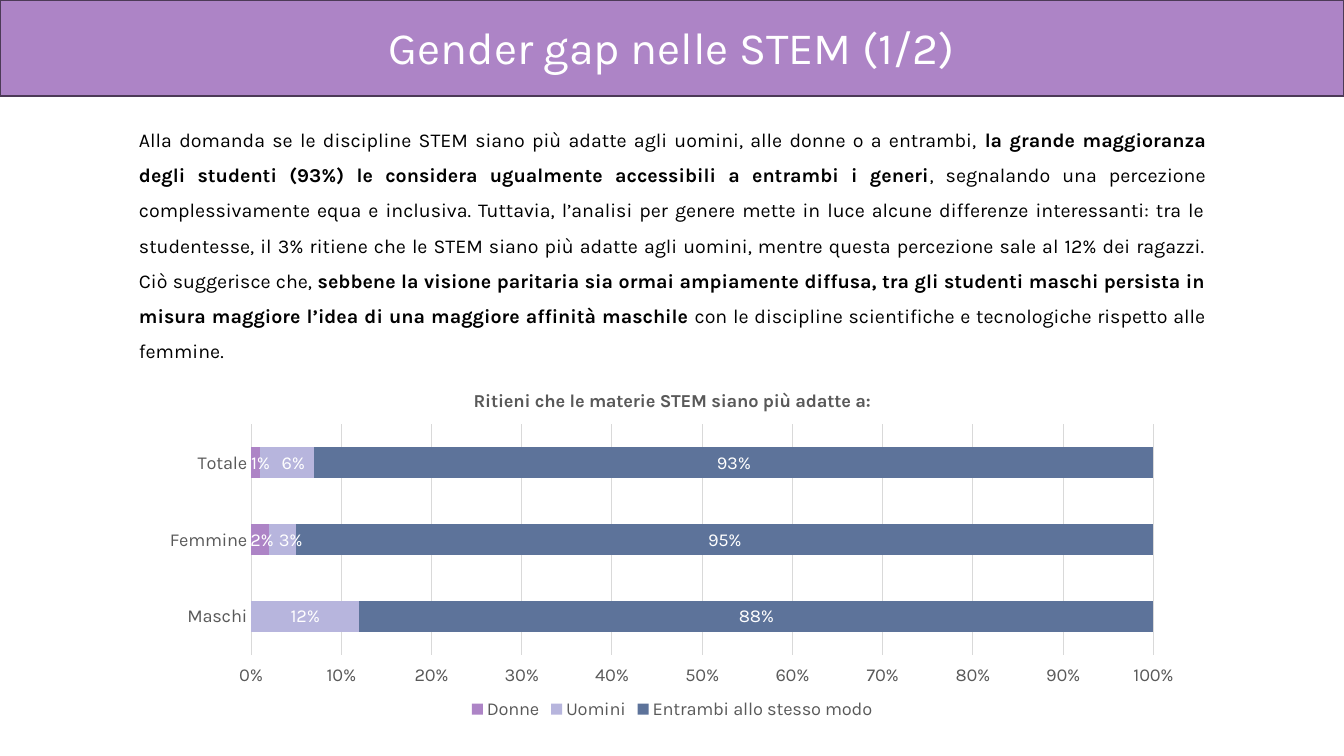
from lxml import etree
from pptx import Presentation
from pptx.chart.data import CategoryChartData
from pptx.dml.color import RGBColor
from pptx.enum.chart import XL_CHART_TYPE as ChartType, XL_LABEL_POSITION as LabelPosition
from pptx.enum.chart import XL_LEGEND_POSITION as LegendPosition, XL_TICK_MARK as TickMark
from pptx.enum.chart import XL_TICK_LABEL_POSITION as TickLabels
from pptx.enum.shapes import MSO_SHAPE as Shape
from pptx.enum.text import MSO_AUTO_SIZE as AutoSize, PP_ALIGN as Align
from pptx.oxml.ns import qn
from pptx.util import Inches, Pt

FONT = "Karla"
PURPLE = RGBColor(0xAD, 0x84, 0xC6)
LILAC = RGBColor(0xB7, 0xB5, 0xDD)
BLUE = RGBColor(0x5D, 0x73, 0x9A)
BORDER = RGBColor(0x4C, 0x3A, 0x57)
GRAY = RGBColor(0x59, 0x59, 0x59)
GRID = RGBColor(0xD9, 0xD9, 0xD9)
WHITE = RGBColor(0xFF, 0xFF, 0xFF)
BLACK = RGBColor(0, 0, 0)

TITLE = [("Gender gap nelle STEM (1/2)", False)]
BODY = [
    ("Alla domanda se le discipline STEM siano più adatte agli uomini, alle donne o a entrambi, ", False),
    ("la grande maggioranza degli studenti (93%) le considera ugualmente accessibili a entrambi i generi", True),
    (", segnalando una percezione complessivamente equa e inclusiva. Tuttavia, l’analisi per genere "
     "mette in luce alcune differenze interessanti: tra le studentesse, il 3% ritiene che le STEM siano "
     "più adatte agli uomini, mentre questa percezione sale al 12% dei ragazzi. Ciò suggerisce che, ", False),
    ("sebbene la visione paritaria sia ormai ampiamente diffusa, tra gli studenti maschi persista in "
     "misura maggiore l’idea di una maggiore affinità maschile", True),
    (" con le discipline scientifiche e tecnologiche rispetto alle femmine.", False),
]
QUESTION = "Ritieni che le materie STEM siano più adatte a:"
GROUPS = ["Totale", "Femmine", "Maschi"]
ANSWERS = [
    ("Donne", (0.01, 0.02, 0), PURPLE),
    ("Uomini", (0.06, 0.03, 0.12), LILAC),
    ("Entrambi allo stesso modo", (0.93, 0.95, 0.88), BLUE),
]
LABEL_SHIFTS = {"Donne": (0.05, 0.02), "Uomini": (0.06, 0.08)}
LABEL_FORMAT = "0%;;"
CHART_AREA = (1.48, 3.7, 10.37, 3.48)
PLOT_AREA = (2.49, 4.21, 8.95, 2.29)


def set_font(font, size, color, bold=None):
    font.name = FONT
    font.size = Pt(size)
    font.color.rgb = color
    if bold is not None:
        font.bold = bold


def add_text(page, area, spans, size, color, align, spacing=None):
    box = page.shapes.add_textbox(*map(Inches, area))
    frame = box.text_frame
    frame.word_wrap = True
    frame.auto_size = AutoSize.SHAPE_TO_FIT_TEXT
    para = frame.paragraphs[0]
    para.alignment = align
    para.line_spacing = spacing
    set_font(para.font, size, color)
    for text, bold in spans:
        span = para.add_run()
        span.text = text
        span.font.bold = bold


def manual_layout(values):
    layout = etree.Element(qn("c:layout"))
    manual = etree.SubElement(layout, qn("c:manualLayout"))
    for name, value in values.items():
        etree.SubElement(manual, qn("c:" + name)).set("val", str(value))
    return layout


def place_plot(chart):
    left, top, width, height = CHART_AREA
    plot_left, plot_top, plot_width, plot_height = PLOT_AREA
    plot_area = chart.element.find(".//" + qn("c:plotArea"))
    for old in plot_area.findall(qn("c:layout")):
        plot_area.remove(old)
    plot_area.insert(0, manual_layout({
        "layoutTarget": "inner", "xMode": "edge", "yMode": "edge",
        "x": round((plot_left - left) / width, 4),
        "y": round((plot_top - top) / height, 4),
        "w": round(plot_width / width, 4),
        "h": round(plot_height / height, 4),
    }))


def shift_label(series, index, shift):
    label = series.points[index].data_label
    set_font(label.font, 13, WHITE, False)
    label.position = LabelPosition.CENTER
    element = series.data_labels._element.findall(qn("c:dLbl"))[index]
    number_format = etree.Element(qn("c:numFmt"), formatCode=LABEL_FORMAT, sourceLinked="0")
    element.insert(1, manual_layout({"x": round(shift / CHART_AREA[2], 4), "y": 0}))
    element.insert(2, number_format)


def add_answers_chart(page):
    data = CategoryChartData(number_format="0%")
    data.categories = GROUPS
    for name, shares, color in ANSWERS:
        data.add_series(name, shares)
    chart = page.shapes.add_chart(ChartType.BAR_STACKED_100, *map(Inches, CHART_AREA), data).chart
    set_font(chart.font, 13, GRAY)

    chart.has_title = True
    heading = chart.chart_title.text_frame
    heading.text = QUESTION
    set_font(heading.paragraphs[0].font, 13, GRAY, True)

    chart.has_legend = True
    chart.legend.position = LegendPosition.BOTTOM
    chart.legend.include_in_layout = False
    set_font(chart.legend.font, 13, GRAY)

    groups, scale = chart.category_axis, chart.value_axis
    for axis in (groups, scale):
        axis.major_tick_mark = axis.minor_tick_mark = TickMark.NONE
        set_font(axis.tick_labels.font, 13, GRAY)
    groups.reverse_order = True
    scale.tick_label_position = TickLabels.HIGH
    scale.minimum_scale, scale.maximum_scale, scale.major_unit = 0, 1, 0.1
    scale.tick_labels.number_format = "0%"
    scale.tick_labels.number_format_is_linked = False
    scale.has_major_gridlines = True
    scale.format.line.fill.background()
    for line in (groups.format.line, scale.major_gridlines.format.line):
        line.color.rgb = GRID
        line.width = Pt(0.75)

    plot = chart.plots[0]
    plot.gap_width = 150
    plot.overlap = 100
    for series, (name, shares, color) in zip(plot.series, ANSWERS):
        series.format.fill.solid()
        series.format.fill.fore_color.rgb = color
        labels = series.data_labels
        labels.show_value = True
        labels.position = LabelPosition.CENTER
        labels.number_format = LABEL_FORMAT
        labels.number_format_is_linked = False
        set_font(labels.font, 13, WHITE, False)
        for index, shift in enumerate(LABEL_SHIFTS.get(name, ())):
            shift_label(series, index, shift)
    place_plot(chart)


def main():
    deck = Presentation()
    deck.slide_width, deck.slide_height = Inches(13.33), Inches(7.5)
    page = deck.slides.add_slide(deck.slide_layouts[6])

    banner = page.shapes.add_shape(Shape.RECTANGLE, 0, 0, deck.slide_width, Inches(0.95))
    banner.shadow.inherit = False
    banner.fill.solid()
    banner.fill.fore_color.rgb = PURPLE
    banner.line.color.rgb = BORDER
    banner.line.width = Pt(1.5)

    add_text(page, (1.68, 0.15, 9.97, 0.64), TITLE, 32, WHITE, Align.CENTER)
    add_text(page, (1.28, 1.1, 10.78, 2.19), BODY, 14, BLACK, Align.JUSTIFY, 1.5)
    add_answers_chart(page)
    deck.save("out.pptx")


if __name__ == "__main__":
    main()
